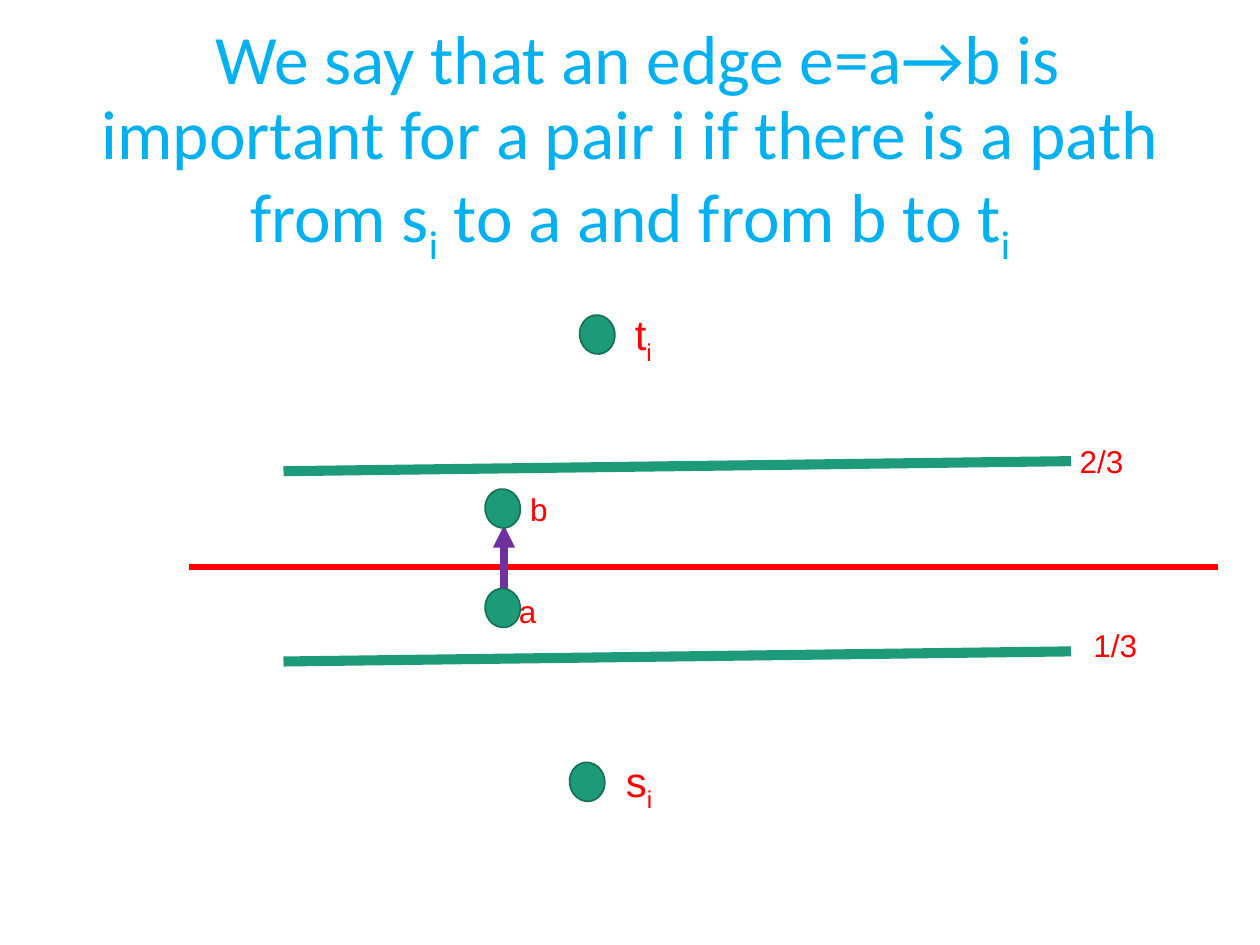
from dataclasses import dataclass

from lxml import etree
from pptx import Presentation
from pptx.dml.color import RGBColor
from pptx.enum.shapes import MSO_CONNECTOR, MSO_SHAPE
from pptx.enum.text import MSO_ANCHOR, MSO_AUTO_SIZE, PP_ALIGN
from pptx.oxml.ns import qn
from pptx.slide import Slide
from pptx.text.text import _Paragraph
from pptx.util import Inches, Pt

STRAIGHT = MSO_CONNECTOR.STRAIGHT
OVAL = MSO_SHAPE.OVAL
MIDDLE = MSO_ANCHOR.MIDDLE
FIT_SHAPE = MSO_AUTO_SIZE.SHAPE_TO_FIT_TEXT
CENTER = PP_ALIGN.CENTER

COLORS = {
    "title": "00B0F0",
    "green": "1D9A78",
    "outline": "157259",
    "red": "FF0000",
    "purple": "7030A0",
}
NODE_WIDTH, NODE_HEIGHT, NODE_TILT = 0.28, 0.31, 171.9
LABEL_WIDTH = 2.5


@dataclass(frozen=True)
class Node:
    left: float
    top: float


@dataclass(frozen=True)
class Label:
    left: float
    top: float
    text: str
    subscript: str = ""
    size: int = 18
    height: float = 0.4


@dataclass(frozen=True)
class Line:
    start: tuple[float, float]
    end: tuple[float, float]
    color: str
    weight: float
    arrow: bool = False


TITLE = [
    (" We say that an edge e=a→b is important for a pair i if there is a path from s", "i"),
    (" to a and from b to t", "i"),
]
LINES = [
    Line((2.25, 5.25), (8.5, 5.17), "green", 5.75),
    Line((2.25, 3.74), (8.5, 3.66), "green", 5.75),
    Line((1.5, 4.5), (9.67, 4.5), "red", 4),
    Line((4, 4.83), (4, 4.17), "purple", 4.25, arrow=True),
]
NODES = [Node(4.52, 6.05), Node(4.6, 2.5), Node(3.85, 4.67), Node(3.85, 3.88)]
LABELS = [
    Label(8.58, 4.92, "1/3"),
    Label(8.47, 3.46, "2/3"),
    Label(4.87, 5.95, "s", "i", 24, 0.5),
    Label(4.94, 2.4, "t", "i", 24, 0.5),
    Label(4.02, 4.65, "a"),
    Label(4.11, 3.84, "b"),
]


def rgb(name: str) -> RGBColor:
    return RGBColor.from_string(COLORS[name])


def add_runs(paragraph: _Paragraph, text: str, subscript: str) -> None:
    paragraph.add_run().text = text
    if subscript:
        run = paragraph.add_run()
        run.text = subscript
        run._r.get_or_add_rPr().set("baseline", "-25000")


def set_font(paragraph: _Paragraph, name: str, size: float, color: str) -> None:
    paragraph.font.name = name
    paragraph.font.size = Pt(size)
    paragraph.font.color.rgb = rgb(color)


def draw_title(slide: Slide) -> None:
    box = slide.shapes.add_textbox(Inches(0.69), Inches(0.4), Inches(8.62), Inches(1.45))
    box.text_frame.word_wrap = True
    box.text_frame.vertical_anchor = MIDDLE
    paragraph = box.text_frame.paragraphs[0]
    paragraph.alignment = CENTER
    paragraph.line_spacing = 0.9
    set_font(paragraph, "Calibri", 39.6, "title")
    for text, subscript in TITLE:
        add_runs(paragraph, text, subscript)


def draw_line(slide: Slide, line: Line) -> None:
    connector = slide.shapes.add_connector(
        STRAIGHT, *(Inches(value) for value in line.start + line.end)
    )
    connector.line.color.rgb = rgb(line.color)
    connector.line.width = Pt(line.weight)
    if line.arrow:
        outline = connector.line._get_or_add_ln()
        etree.SubElement(outline, qn("a:tailEnd"), type="triangle")
    etree.SubElement(connector._element.spPr, qn("a:effectLst"))


def draw_node(slide: Slide, node: Node) -> None:
    oval = slide.shapes.add_shape(
        OVAL, Inches(node.left), Inches(node.top), Inches(NODE_WIDTH), Inches(NODE_HEIGHT)
    )
    oval.rotation = NODE_TILT
    oval.shadow.inherit = False
    oval.fill.solid()
    oval.fill.fore_color.rgb = rgb("green")
    oval.line.color.rgb = rgb("outline")
    oval.line.width = Pt(1)


def draw_label(slide: Slide, label: Label) -> None:
    box = slide.shapes.add_textbox(
        Inches(label.left), Inches(label.top), Inches(LABEL_WIDTH), Inches(label.height)
    )
    box.text_frame.word_wrap = True
    box.text_frame.auto_size = FIT_SHAPE
    paragraph = box.text_frame.paragraphs[0]
    set_font(paragraph, "Arial", label.size, "red")
    add_runs(paragraph, label.text, label.subscript)


def main() -> None:
    presentation = Presentation()
    presentation.slide_width = Inches(10)
    presentation.slide_height = Inches(7.5)
    slide = presentation.slides.add_slide(presentation.slide_layouts[6])
    draw_title(slide)
    for line in LINES:
        draw_line(slide, line)
    for node in NODES:
        draw_node(slide, node)
    for label in LABELS:
        draw_label(slide, label)
    presentation.save("out.pptx")


if __name__ == "__main__":
    main()
